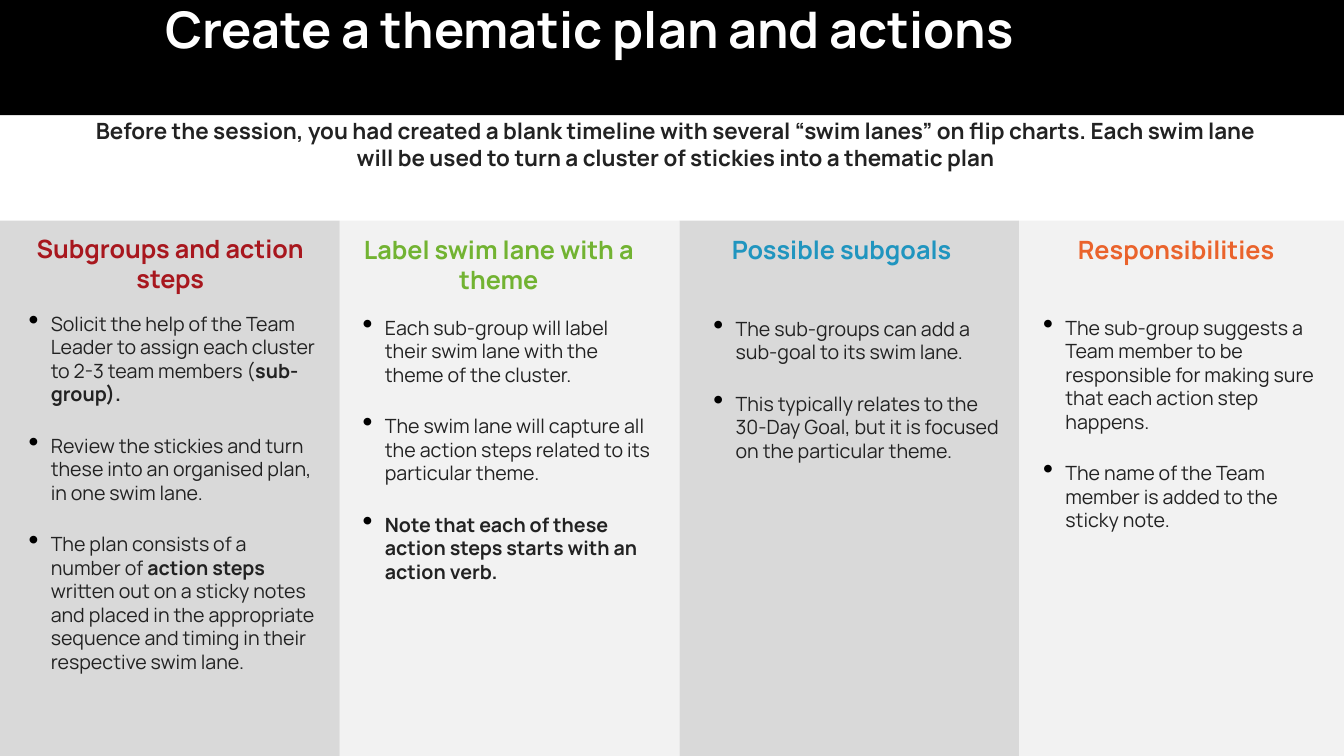
import dataclasses

import lxml.etree
import pptx
import pptx.dml.color
import pptx.enum.shapes
import pptx.enum.text
import pptx.oxml.ns
import pptx.util
from pptx.util import Cm


@dataclasses.dataclass(frozen=True)
class Theme:
    """Hold the font, type sizes and colours of the slide."""
    font: str = "Manrope"
    title_size: int = 36
    intro_size: int = 16
    heading_size: int = 18
    list_size: int = 14
    gap: int = 20
    ink: str = "222222"
    white: str = "FFFFFF"
    black: str = "000000"
    lanes: tuple = ("D9D9D9", "F2F2F2")
    headings: tuple = ("A8171E", "72B332", "2095BF", "EA632C")


THEME = Theme()
SLIDE_WIDTH, SLIDE_HEIGHT = 33.87, 19.05
BAND_HEIGHT = 2.9
LANE_WIDTH, LANE_TOP = 8.56, 5.56

TITLE = "Create a thematic plan and actions"
INTRO = ("Before the session, you had created a blank timeline with several “swim lanes” on flip charts. "
         "Each swim lane will be used to turn a cluster of stickies into a thematic plan")

LANES = [
    ("Subgroups and action steps", (0.2, 5.69), (0.34, 7.67), [
        "Solicit the help of the Team Leader to assign each cluster to 2-3 team members (**sub-group).**",
        "Review the stickies and turn these into an organised plan, in one swim lane.",
        "The plan consists of a number of **action steps **written out on a sticky notes and placed "
        "in the appropriate sequence and timing in their respective swim lane.",
    ]),
    ("Label swim lane with a theme", (8.48, 5.72), (8.76, 7.77), [
        "Each sub-group will label their swim lane with the theme of the cluster.",
        "The swim lane will capture all the action steps related to its particular theme.",
        "**Note that each of these action steps starts with an action verb.**",
    ]),
    ("Possible subgoals", (17.12, 5.72), (17.6, 7.8), [
        "The sub-groups can add a sub-goal to its swim lane.",
        "This typically relates to the 30-Day Goal, but it is focused on the particular theme.",
    ]),
    ("Responsibilities", (25.55, 5.72), (25.91, 7.77), [
        "The sub-group suggests a Team member to be responsible for making sure "
        "that each action step happens.",
        "The name of the Team member is added to the sticky note.",
    ]),
]


def set_bullet(properties, bulleted):
    """Give paragraph properties a large black bullet, or none."""
    def add(tag, parent=properties, **attributes):
        return lxml.etree.SubElement(parent, pptx.oxml.ns.qn(tag), attributes)

    if bulleted:
        add("a:srgbClr", add("a:buClr"), val=THEME.black)
        add("a:buSzPct", val="150000")
        add("a:buChar", char="•")
    else:
        add("a:buNone")


def write(shape, paragraphs, *, size, color, bold=False, align="LEFT", inset=0.18,
          indent=0.0, hanging=0.0, bulleted=False, line_spacing=1.0):
    """Fill a shape with paragraphs in which ** switches bold on and off."""
    frame = shape.text_frame
    frame.word_wrap = True
    frame.auto_size = pptx.enum.text.MSO_AUTO_SIZE.NONE
    frame.vertical_anchor = pptx.enum.text.MSO_ANCHOR.TOP
    frame.margin_left = frame.margin_right = frame.margin_top = frame.margin_bottom = Cm(inset)
    for index, text in enumerate(paragraphs):
        paragraph = frame.add_paragraph() if index else frame.paragraphs[0]
        paragraph.alignment = getattr(pptx.enum.text.PP_ALIGN, align)
        paragraph.line_spacing = line_spacing
        paragraph.space_before = pptx.util.Pt(THEME.gap if index else 0)
        properties = paragraph._p.get_or_add_pPr()
        properties.set("marL", str(Cm(indent)))
        properties.set("indent", str(Cm(-hanging)))
        set_bullet(properties, bulleted)
        for part, piece in enumerate(text.split("**")):
            if piece:
                run = paragraph.add_run()
                run.text = piece
                run.font.name = THEME.font
                run.font.size = pptx.util.Pt(size)
                run.font.bold = bold or part % 2 == 1
                run.font.color.rgb = pptx.dml.color.RGBColor.from_string(color)


def place(shape, left, top, width, height):
    """Move and size a placeholder, in centimetres."""
    shape.left, shape.top, shape.width, shape.height = map(Cm, (left, top, width, height))
    return shape


def add_panel(slide, left, top, width, height, color):
    """Add a plain filled rectangle behind the text."""
    panel = slide.shapes.add_shape(pptx.enum.shapes.MSO_SHAPE.RECTANGLE,
                                   *map(Cm, (left, top, width, height)))
    panel.shadow.inherit = False
    panel.fill.solid()
    panel.fill.fore_color.rgb = pptx.dml.color.RGBColor.from_string(color)
    panel.line.fill.background()
    slide.shapes._spTree.insert(2, panel._element)


def add_lane(slide, index, heading, heading_at, list_at, steps):
    """Add one swim lane with its heading and bulleted steps."""
    left = index * LANE_WIDTH
    add_panel(slide, left, LANE_TOP, min(LANE_WIDTH, SLIDE_WIDTH - left),
              SLIDE_HEIGHT - LANE_TOP, THEME.lanes[index % 2])
    heading_box = slide.shapes.add_textbox(*map(Cm, (*heading_at, 7.98, 2.51)))
    write(heading_box, [heading], size=THEME.heading_size, color=THEME.headings[index],
          bold=True, align="CENTER", indent=0.2)
    steps_box = slide.shapes.add_textbox(*map(Cm, (*list_at, 7.85, SLIDE_HEIGHT - list_at[1])))
    write(steps_box, steps, size=THEME.list_size, color=THEME.ink,
          indent=0.76, hanging=0.56, bulleted=True)


def main():
    """Build the slide and save it."""
    deck = pptx.Presentation()
    deck.slide_width, deck.slide_height = Cm(SLIDE_WIDTH), Cm(SLIDE_HEIGHT)
    slide = deck.slides.add_slide(deck.slide_layouts[1])
    add_panel(slide, 0, 0, SLIDE_WIDTH, BAND_HEIGHT, THEME.black)
    write(place(slide.shapes.title, 3.91, 0, 25.07, 2.51), [TITLE], size=THEME.title_size,
          color=THEME.white, bold=True, inset=0.25, line_spacing=0.8)
    write(place(slide.placeholders[1], 1.7, 2.77, 30.45, 2.51), [INTRO], size=THEME.intro_size,
          color=THEME.ink, bold=True, align="CENTER", indent=0.2)
    for index, lane in enumerate(LANES):
        add_lane(slide, index, *lane)
    deck.save("out.pptx")


if __name__ == "__main__":
    main()
